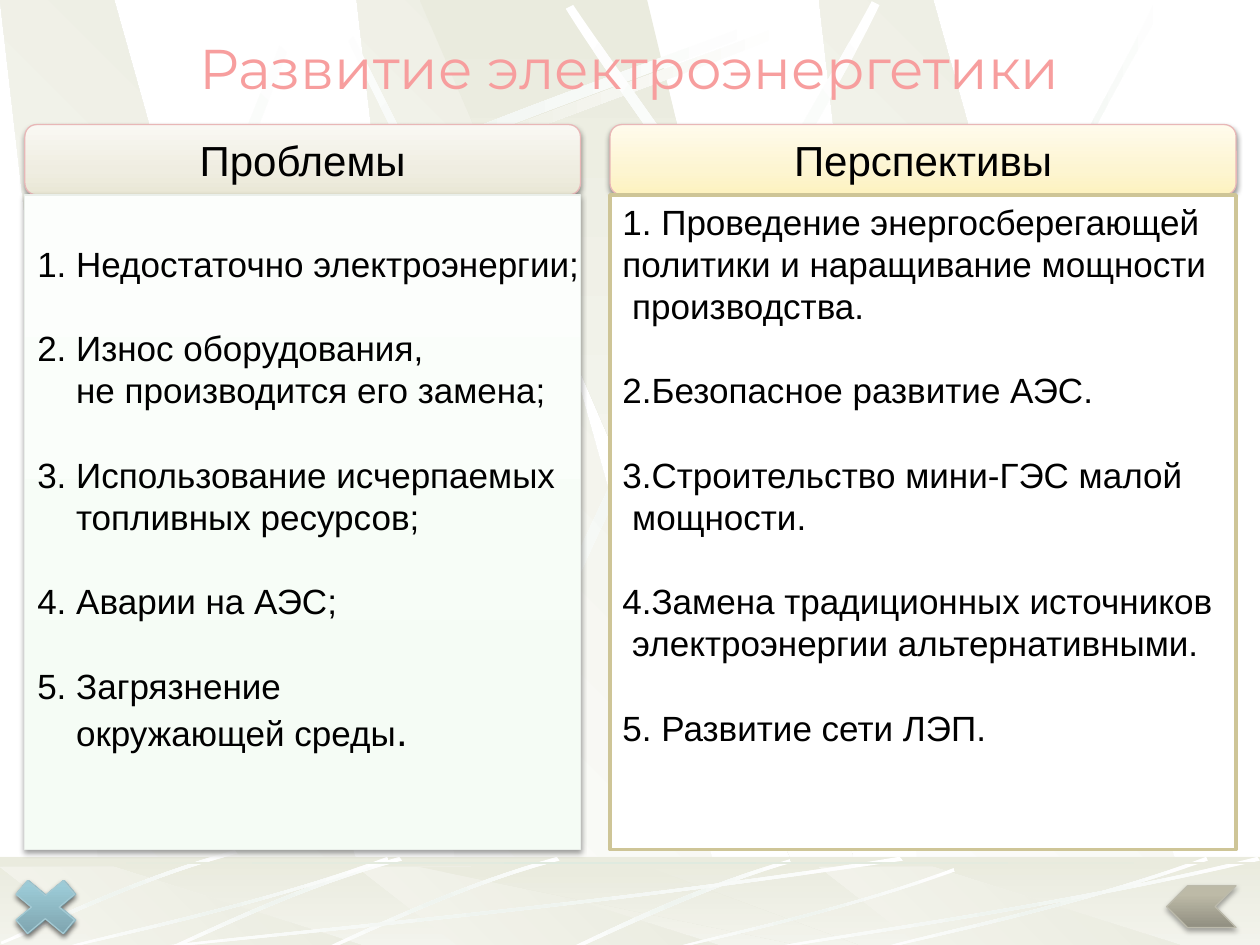
from dataclasses import dataclass
from typing import NamedTuple

from pptx import Presentation
from pptx.dml.color import RGBColor
from pptx.enum.shapes import MSO_SHAPE
from pptx.enum.text import MSO_ANCHOR, PP_ALIGN
from pptx.oxml.ns import qn
from pptx.util import Pt
from lxml.etree import SubElement


class Box(NamedTuple):
    left: float
    top: float
    width: float
    height: float


class Gradient(NamedTuple):
    stops: tuple  # (percent, colour) pairs
    angle: float = 270  # clockwise, in degrees


class Shadow(NamedTuple):
    alpha: int
    distance: float


class Line(NamedTuple):
    text: str
    opens_item: bool = False
    indent: float = 0


@dataclass(frozen=True)
class Theme:
    title_font: str = "Montserrat"
    body_font: str = "Arial"
    title_size: float = 32
    header_size: float = 24
    body_size: float = 20
    line_height: float = 24.1
    title: str = "F79E9E"
    ink: str = "000000"
    white: str = "FFFFFF"
    sand: str = "EAEBDE"
    mist: str = "EFF4EF"
    header_line: str = "E8B7B7"
    problems_line: str = "EAEFEA"
    prospects_line: str = "CEC597"
    cross_line: str = "A3C9D3"
    arrow_line: str = "BCBAAB"
    problems_header: Gradient = Gradient(((0, "E9E7D5"), (35, "EFEDE1"), (100, "F9F8F3")))
    prospects_header: Gradient = Gradient(((0, "FDF2BF"), (35, "FDF5D1"), (100, "FFFBEC")))
    problems_body: Gradient = Gradient(((0, "F5FCF5"), (35, "F7FDF7"), (100, "FCFEFC")))
    cross: Gradient = Gradient(((0, "789CA6"), (80, "9CCBD7"), (100, "9CCCD9")))
    arrow: Gradient = Gradient(((0, "918F81"), (80, "BDBAA7"), (100, "BEBBA7")))
    panel_shadow: Shadow = Shadow(38, 1.6)
    button_shadow: Shadow = Shadow(35, 1.8)


THEME = Theme()
SLAB = ((0.285, 1), (1, 1), (0.3, 0), (0, 0))
BEAM = ((0, 0), (0.9, 1), (1, 1), (0.5, 0))

# A streak is two cubic edges: four points out, four points back
SWEEP = ((14.4, 198), (204.5, 96.5), (377.3, 42.5), (450.7, 13),
         (452.9, 17.3), (380.2, 49.7), (182.9, 108.7), (16.6, 205.2))
TOP_STREAKS = (
    (45, ((331.2, 313.9), (281.5, 168.5), (217.4, 55.4), (193.7, 3.6),
          (190.8, 5), (212.4, 56.9), (286.6, 185.8), (326.9, 316.1))),
    (0, tuple((x - 4.3, y - 5.8) for x, y in SWEEP)),
    (311.7, ((16.6, 450), (67, 240.5), (141.8, 75.6), (169.2, 1.4),
             (173.5, 2.9), (149, 78.5), (61.9, 265), (23, 452.9))),
    (321.6, ((277.2, 442.1), (358.6, 230.4), (459.4, 73.4), (498.2, 0.7),
             (502.6, 2.9), (467.3, 77.8), (349.9, 255.6), (283.7, 447.1))),
    (34.7, ((580.3, 403.2), (482.4, 211), (371.5, 68.4), (327.6, 2.9),
            (323.3, 5), (365, 72.7), (493.2, 234), (575.3, 408.2))),
    (0, ((531.4, 283.7), (586.1, 124.6), (639.4, 47.5), (660.2, 0),
         (667.4, 0), (601.9, 104.4), (553.7, 231.8), (535.7, 285.8))),
)
FOOTER_CURL = ((451.4, 491), (386.6, 510.5), (343.4, 534.2), (322.6, 542.9),
               (326.2, 543.6), (352.8, 531.4), (411.1, 504), (452.2, 493.2))
FOOTER_DASH = ((318.2, 489.6), (255.6, 507.6), (206.6, 532.8), (184.3, 542.2),
               (185, 543.6), (207.4, 535), (262.8, 506.2), (319.7, 491.8))
UNIT_STREAK = ((1, 0.04), (0.57, 0.57), (0.17, 0.85), (0.005, 1),
               (0, 0.99), (0.165, 0.81), (0.616, 0.51), (0.995, 0))
FOOTER_STREAKS = (Box(72, 489.6, 444.2, 54), Box(30.2, 489.6, 192, 54), Box(379.4, 496.1, 166.3, 47.5),
                  Box(498.2, 489.6, 192, 54), Box(432, 489.6, 288, 54))
FOOTER = Box(0, 489.6, 720, 54)

PROBLEMS = (
    Line("1. Недостаточно электроэнергии;", True),
    Line("2. Износ оборудования,", True), Line("не производится его замена;", indent=22.2),
    Line("3. Использование исчерпаемых", True), Line("топливных ресурсов;", indent=22.2),
    Line("4. Аварии на АЭС;", True),
    Line("5. Загрязнение", True), Line("окружающей среды", indent=22.2),
)
PROSPECTS = (
    Line("1. Проведение энергосберегающей", True),
    Line("политики и наращивание мощности"), Line("производства.", indent=5.6),
    Line("2.Безопасное развитие АЭС.", True),
    Line("3.Строительство мини-ГЭС малой", True), Line("мощности.", indent=5.6),
    Line("4.Замена традиционных источников", True), Line("электроэнергии альтернативными.", indent=5.6),
    Line("5. Развитие сети ЛЭП.", True),
)


def paint(shape, fill, line: str | None = None, width: float = 0.75, shadow: Shadow | None = None) -> None:
    if isinstance(fill, Gradient):
        shape.fill.gradient()
        shape.fill.gradient_angle = (360 - fill.angle) % 360
        stops = shape._element.spPr.find(".//" + qn("a:gsLst"))
        for stop in list(stops):
            stops.remove(stop)
        for percent, colour in fill.stops:
            stop = SubElement(stops, qn("a:gs"), pos=str(percent * 1000))
            SubElement(stop, qn("a:srgbClr"), val=colour)
    else:
        shape.fill.solid()
        shape.fill.fore_color.rgb = RGBColor.from_string(fill)
    if line:
        shape.line.color.rgb = RGBColor.from_string(line)
        shape.line.width = Pt(width)
    else:
        shape.line.fill.background()
    shape.shadow.inherit = False
    if shadow:
        effects = shape._element.spPr.find(qn("a:effectLst"))
        outer = SubElement(effects, qn("a:outerShdw"), blurRad=str(Pt(3.1)),
                           dist=str(Pt(shadow.distance)), dir="5400000", rotWithShape="0")
        colour = SubElement(outer, qn("a:srgbClr"), val=THEME.ink)
        SubElement(colour, qn("a:alpha"), val=str(shadow.alpha * 1000))


def add_preset(page, kind, box: Box, fill, *style):
    shape = page.shapes.add_shape(kind, *map(Pt, box))
    paint(shape, fill, *style)
    return shape


def add_outline(page, points, fill: Gradient):
    corners = [(Pt(x), Pt(y)) for x, y in points]
    builder = page.shapes.build_freeform(*corners[0])
    builder.add_line_segments(corners[1:], close=True)
    shape = builder.convert_to_shape()
    paint(shape, fill)
    return shape


def fit(points, box: Box) -> list:
    return [(box.left + x * box.width, box.top + y * box.height) for x, y in points]


def add_streak(page, points, angle: float = 0, middle: str = THEME.mist) -> None:
    stops = ((0, THEME.white), (50, middle), (100, THEME.white))
    shape = add_outline(page, points, Gradient(stops, angle))
    # Join each run of three segments into one cubic curve
    outline = shape._element.spPr.find(".//" + qn("a:path"))
    segments = outline.findall(qn("a:lnTo"))
    for edge in (segments[:3], segments[4:7]):
        cubic = SubElement(outline, qn("a:cubicBezTo"))
        edge[0].addprevious(cubic)
        for segment in edge:
            cubic.append(segment[0])
            outline.remove(segment)


def add_slabs(page, top: float, height: float) -> None:
    for left in (0, 203.8, 468):
        add_outline(page, fit(SLAB, Box(left, top, 217.4, height)),
                    Gradient(((0, THEME.white), (100, THEME.sand)), 315))
    add_outline(page, fit(BEAM, Box(239.8, top, 260, height)),
                Gradient(((0, THEME.sand), (100, THEME.white)), 90))


def add_background(page) -> None:
    add_slabs(page, 0, 541.4)
    add_streak(page, SWEEP, middle=THEME.sand)
    for angle, points in TOP_STREAKS:
        add_streak(page, points, angle)
    # Footer band with its veil and streaks
    add_preset(page, MSO_SHAPE.RECTANGLE, FOOTER, Gradient(((0, THEME.sand), (100, THEME.white)), 90))
    add_slabs(page, 495.4, 48.2)
    veil = add_preset(page, MSO_SHAPE.RECTANGLE, FOOTER, THEME.sand)
    SubElement(veil._element.spPr.find(".//" + qn("a:srgbClr")), qn("a:alpha"), val="50000")
    add_streak(page, FOOTER_CURL)
    for dx, dy in ((0, 0), (-90, 0), (-184, -4)):
        add_streak(page, [(x + dx, y + dy) for x, y in FOOTER_DASH], 315)
    for box in FOOTER_STREAKS:
        add_streak(page, fit(UNIT_STREAK, box))
    add_preset(page, MSO_SHAPE.RECTANGLE, Box(0, 492.5, 720, 1.4),
               Gradient(((0, THEME.sand), (50, "DFEADF"), (100, THEME.sand)), 0))


def set_font(font, size: float, colour: str = THEME.ink, name: str = THEME.body_font) -> None:
    font.name, font.size = name, Pt(size)
    font.color.rgb = RGBColor.from_string(colour)


def write_heading(shape, text: str, *style) -> None:
    para = shape.text_frame.paragraphs[0]
    para.text, para.alignment = text, PP_ALIGN.CENTER
    set_font(para.font, *style)


def write_list(shape, lines: tuple, lead: float = 0):
    frame = shape.text_frame
    frame.word_wrap, frame.vertical_anchor = False, MSO_ANCHOR.TOP
    frame.margin_top = Pt(3 + lead)
    for number, line in enumerate(lines):
        para = frame.add_paragraph() if number else frame.paragraphs[0]
        para.text, para.alignment = line.text, PP_ALIGN.LEFT
        para.line_spacing = Pt(THEME.line_height)
        if number and line.opens_item:
            para.space_before = Pt(THEME.line_height)
        if line.indent:
            para._p.get_or_add_pPr().set("marL", str(Pt(line.indent)))
        set_font(para.font, THEME.body_size)
    return para


def main() -> None:
    deck = Presentation()
    deck.slide_width, deck.slide_height = Pt(720), Pt(540)
    page = deck.slides.add_slide(deck.slide_layouts[6])
    add_background(page)

    # Title
    title = page.shapes.add_textbox(*map(Pt, Box(0, 15.8, 720, 46)))
    title.text_frame.word_wrap = True
    write_heading(title, "Развитие электроэнергетики", THEME.title_size, THEME.title, THEME.title_font)

    # Column headers
    for left, width, text, fill in ((14.2, 317.5, "Проблемы", THEME.problems_header),
                                    (348.6, 357.8, "Перспективы", THEME.prospects_header)):
        header = add_preset(page, MSO_SHAPE.ROUNDED_RECTANGLE, Box(left, 71.2, width, 40.2), fill,
                            THEME.header_line, 0.75, THEME.panel_shadow)
        write_heading(header, text, THEME.header_size)

    # Column bodies
    prospects = add_preset(page, MSO_SHAPE.RECTANGLE, Box(348.6, 111.4, 357.8, 374), THEME.white,
                           THEME.prospects_line, 2)
    write_list(prospects, PROSPECTS)
    problems = add_preset(page, MSO_SHAPE.RECTANGLE, Box(14.2, 111.4, 317.5, 374), THEME.problems_body,
                          THEME.problems_line, 0.75, THEME.panel_shadow)
    last = write_list(problems, PROBLEMS, lead=THEME.line_height)
    last.line_spacing = Pt(28)
    span = last.add_run()
    span.text, span.font.size = ".", Pt(THEME.header_size)

    # Navigation buttons
    for left in (0.7, 0):
        add_preset(page, MSO_SHAPE.MATH_MULTIPLY, Box(left, 496.8, 51.8, 43.2), THEME.cross,
                   THEME.cross_line, 0.75, THEME.button_shadow)
    arrow = add_preset(page, MSO_SHAPE.CHEVRON, Box(666.7, 506.2, 39.6, 23.8), THEME.arrow,
                       THEME.arrow_line, 0.75, THEME.button_shadow)
    arrow._element.spPr.find(qn("a:xfrm")).set("flipH", "1")

    deck.save("out.pptx")


if __name__ == "__main__":
    main()
